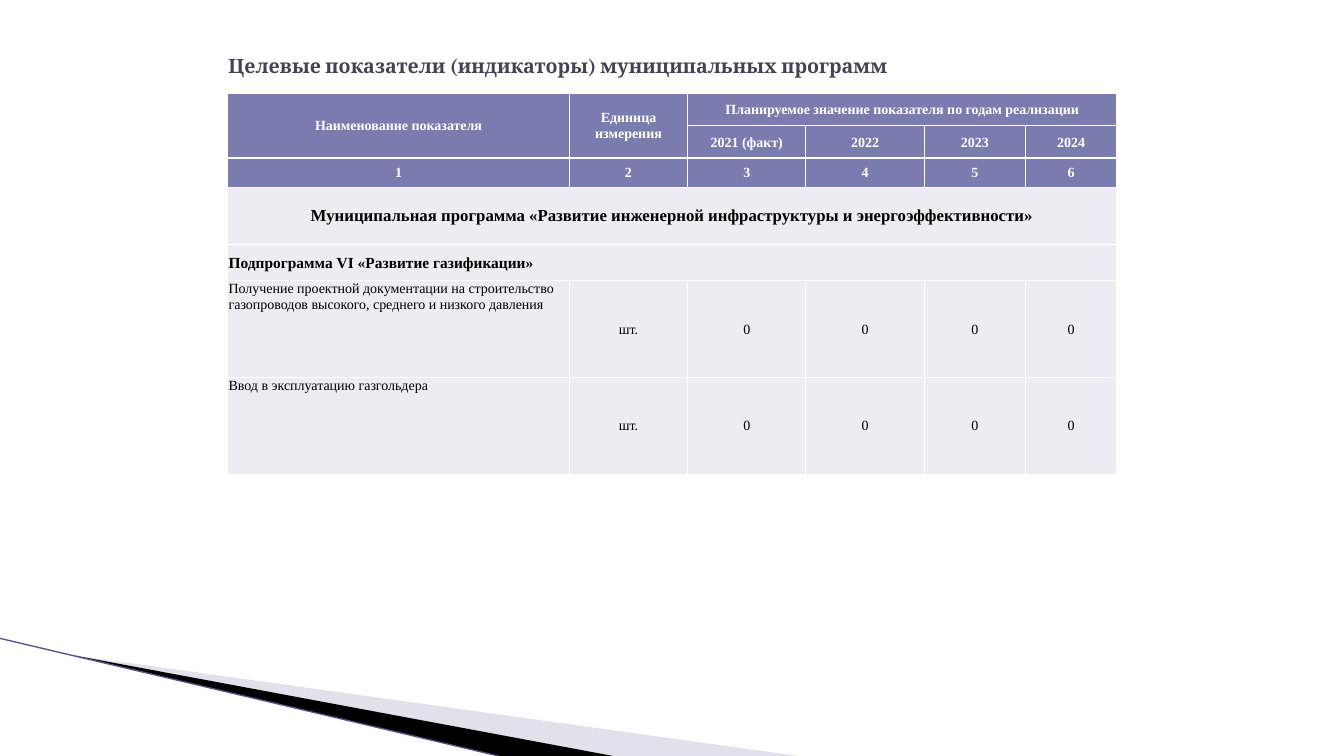
from lxml.etree import SubElement
from pptx import Presentation
from pptx.dml.color import RGBColor
from pptx.enum.shapes import MSO_CONNECTOR
from pptx.enum.text import MSO_ANCHOR, PP_ALIGN
from pptx.oxml.ns import qn
from pptx.util import Pt

WHITE = RGBColor(0xFF, 0xFF, 0xFF)
BLACK = RGBColor(0, 0, 0)
TITLE_COLOR = RGBColor(0x42, 0x44, 0x56)
HEADER_FILL = RGBColor(0x7A, 0x7B, 0xAE)
BODY_FILL = RGBColor(0xEC, 0xEC, 0xF2)
PALE_WEDGE = RGBColor(0xB6, 0xB6, 0xD1)
EDGE_COLOR = RGBColor(0x53, 0x54, 0x8A)

COLUMN_WIDTHS = [244, 84.5, 84.5, 84.5, 72.5, 65]
ROW_HEIGHTS = [23.5, 23, 20.8, 41, 25.7, 69.2, 69.2]
HEADER_ROWS = 3
PROGRAM_ROW = 3
SUBPROGRAM_ROW = 4
MERGES = [(0, 0, 1, 0), (0, 1, 1, 1), (0, 2, 0, 5), (3, 0, 3, 5), (4, 0, 4, 5)]
ROWS = [
    ["Наименование показателя", "Единица измерения",
     "Планируемое значение показателя по годам реализации"],
    ["", "", "2021 (факт)", "2022", "2023", "2024"],
    ["1", "2", "3", "4", "5", "6"],
    ["Муниципальная программа «Развитие инженерной инфраструктуры и энергоэффективности»"],
    ["Подпрограмма VI «Развитие газификации»"],
    ["Получение проектной документации на строительство газопроводов "
     "высокого, среднего и низкого давления", "шт.", "0", "0", "0", "0"],
    ["Ввод в эксплуатацию газгольдера", "шт.", "0", "0", "0", "0"],
]


def add_wedge(slide, points, color, opacity=100):
    start, *others = [(Pt(x), Pt(y)) for x, y in points]
    builder = slide.shapes.build_freeform(*start, scale=1.0)
    builder.add_line_segments(others, close=True)
    wedge = builder.convert_to_shape()
    wedge.shadow.inherit = False
    wedge.line.fill.background()
    wedge.fill.solid()
    wedge.fill.fore_color.rgb = color
    if opacity < 100:
        color_element = wedge.element.spPr.find(qn("a:solidFill"))[0]
        SubElement(color_element, qn("a:alpha"), val=str(opacity * 1000))


def add_corner(slide, left, top, width, height):
    bottom = top + height
    tip = (left + 52, top + 12)
    add_wedge(slide, [tip, (left + width, bottom), (left + 438, bottom)], PALE_WEDGE, 40)
    add_wedge(slide, [tip, (left + 438, bottom), (left + 356, bottom)], BLACK)
    edge = slide.shapes.add_connector(
        MSO_CONNECTOR.STRAIGHT, Pt(left), Pt(top), Pt(left + 356), Pt(bottom))
    edge.line.color.rgb = EDGE_COLOR
    edge.line.width = Pt(0.95)
    SubElement(edge.element.spPr, qn("a:effectLst"))


def set_title(slide, left, top, width, height):
    title = slide.shapes.title
    title.left, title.top, title.width, title.height = map(Pt, (left, top, width, height))
    frame = title.text_frame
    frame.text = "Целевые показатели (индикаторы) муниципальных программ"
    frame.word_wrap = True
    frame.vertical_anchor = MSO_ANCHOR.MIDDLE
    paragraph = frame.paragraphs[0]
    paragraph.alignment = PP_ALIGN.LEFT
    paragraph.font.name = "Cambria"
    paragraph.font.size = Pt(14)
    paragraph.font.bold = True
    paragraph.font.color.rgb = TITLE_COLOR


def set_borders(cell):
    properties = cell._tc.get_or_add_tcPr()
    for side in ("a:lnL", "a:lnR", "a:lnT", "a:lnB"):
        border = SubElement(properties, qn(side), w=str(Pt(1)))
        fill = SubElement(border, qn("a:solidFill"))
        SubElement(fill, qn("a:srgbClr"), val=str(WHITE))


def format_cell(cell, row, column):
    is_header = row < HEADER_ROWS
    is_indicator_name = row > SUBPROGRAM_ROW and column == 0
    set_borders(cell)
    cell.fill.solid()
    cell.fill.fore_color.rgb = HEADER_FILL if is_header else BODY_FILL
    cell.margin_left = cell.margin_top = cell.margin_right = Pt(0.6)
    cell.margin_bottom = Pt(0)
    cell.vertical_anchor = MSO_ANCHOR.TOP if is_indicator_name else MSO_ANCHOR.MIDDLE
    paragraph = cell.text_frame.paragraphs[0]
    is_left = is_indicator_name or row == SUBPROGRAM_ROW
    paragraph.alignment = PP_ALIGN.LEFT if is_left else PP_ALIGN.CENTER
    font = paragraph.font
    font.name = "Times New Roman"
    font.size = Pt({PROGRAM_ROW: 12, SUBPROGRAM_ROW: 11}.get(row, 10))
    font.bold = row <= SUBPROGRAM_ROW
    font.color.rgb = WHITE if is_header else BLACK


def add_indicator_table(slide, left, top):
    table = slide.shapes.add_table(
        len(ROW_HEIGHTS), len(COLUMN_WIDTHS), Pt(left), Pt(top),
        Pt(sum(COLUMN_WIDTHS)), Pt(sum(ROW_HEIGHTS))).table
    table.horz_banding = False
    for column, width in zip(table.columns, COLUMN_WIDTHS):
        column.width = Pt(width)
    for row, height in zip(table.rows, ROW_HEIGHTS):
        row.height = Pt(height)
    for row, texts in enumerate(ROWS):
        for column, text in enumerate(texts):
            if text:
                table.cell(row, column).text = text
        for column in range(len(COLUMN_WIDTHS)):
            format_cell(table.cell(row, column), row, column)
    for first_row, first_column, last_row, last_column in MERGES:
        table.cell(first_row, first_column).merge(table.cell(last_row, last_column))


def main():
    presentation = Presentation()
    presentation.slide_width = Pt(960)
    presentation.slide_height = Pt(540)
    slide = presentation.slides.add_slide(presentation.slide_layouts[5])
    add_corner(slide, 0, 456, 570, 84)
    set_title(slide, 156, 21.6, 648, 50)
    add_indicator_table(slide, 162.7, 66.4)
    presentation.save("out.pptx")


if __name__ == "__main__":
    main()
